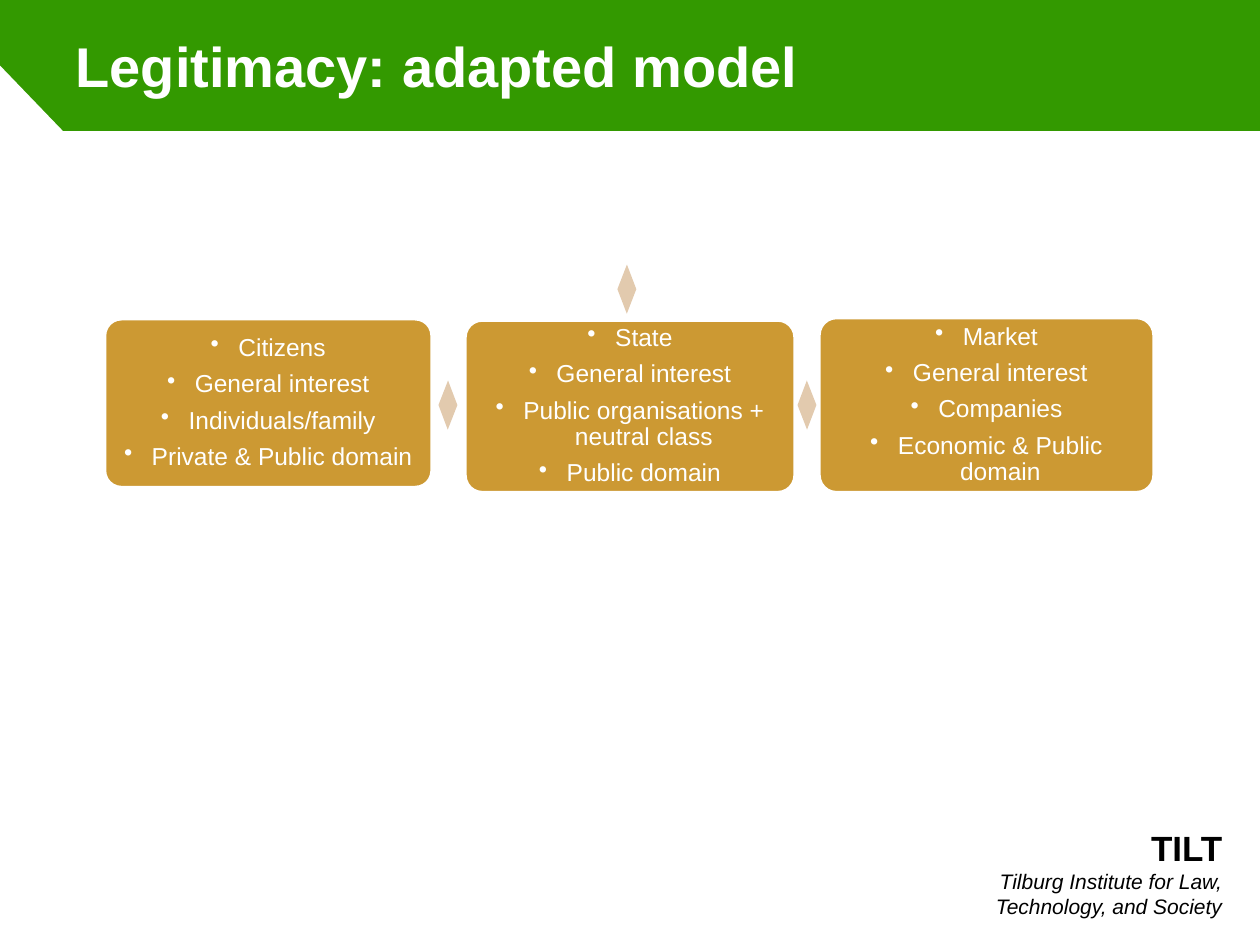
from lxml import etree
from pptx import Presentation
from pptx.dml.color import RGBColor
from pptx.enum.shapes import MSO_SHAPE
from pptx.enum.text import MSO_ANCHOR, PP_ALIGN
from pptx.oxml.ns import qn
from pptx.util import Inches, Pt

ROUNDED = MSO_SHAPE.ROUNDED_RECTANGLE
DOUBLE_ARROW = MSO_SHAPE.LEFT_RIGHT_ARROW
MIDDLE = MSO_ANCHOR.MIDDLE
LEFT, CENTER, RIGHT = PP_ALIGN.LEFT, PP_ALIGN.CENTER, PP_ALIGN.RIGHT

GREEN = RGBColor(0x33, 0x99, 0x00)
OCHRE = RGBColor(0xCC, 0x99, 0x33)
SAND = RGBColor(0xE2, 0xCA, 0xAE)
WHITE = RGBColor(0xFF, 0xFF, 0xFF)
BLACK = RGBColor(0x00, 0x00, 0x00)

TITLE = "Legitimacy: adapted model"
ACTORS = [
    ((3.69, 2.54, 2.62, 1.37),
     ["State", "General interest", "Public organisations + neutral class", "Public domain"]),
    ((6.5, 2.52, 2.66, 1.39),
     ["Market", "General interest", "Companies", "Economic & Public domain"]),
    ((0.83, 2.53, 2.6, 1.34),
     ["Citizens", "General interest", "Individuals/family", "Private & Public domain"]),
]
ARROW_SIZE = (0.15, 0.39)
ARROWS = [((6.33, 3.02), 359.8), ((4.9, 2.1), 180.1), ((3.48, 3.02), 0.4)]
SIGNATURE = [
    ("TILT", {"size": Pt(20), "bold": True}),
    ("Tilburg Institute for Law, Technology, and Society",
     {"size": Pt(12), "bold": False, "italic": True}),
]
PAGE_OUTLINE = [(0.5, 1.04), (0, 0.52), (0, 7.5), (10, 7.5), (10, 1.04)]
BULLET_INDENT = Inches(0.22)


def inches(values):
    return [Inches(value) for value in values]


def format_font(font, color, **values):
    font.name = "Arial"
    font.color.rgb = color
    for name, value in values.items():
        setattr(font, name, value)


def fill_plain(shape, color):
    shape.shadow.inherit = False
    shape.fill.solid()
    shape.fill.fore_color.rgb = color
    shape.line.fill.background()


def add_bullet(paragraph):
    properties = paragraph._p.get_or_add_pPr()
    properties.set("marL", str(BULLET_INDENT))
    properties.set("indent", str(-BULLET_INDENT))
    etree.SubElement(properties, qn("a:buChar")).set("char", "•")


def add_page(slide):
    """Draw the white page below the green header, with its cut corner."""
    points = [inches(point) for point in PAGE_OUTLINE]
    builder = slide.shapes.build_freeform(*points[0], scale=1.0)
    builder.add_line_segments(points[1:], close=True)
    fill_plain(builder.convert_to_shape(), WHITE)


def add_title(slide):
    title = slide.shapes.title
    title.left, title.top, title.width, title.height = inches((0.5, 0, 9, 1.04))
    title.text_frame.vertical_anchor = MIDDLE
    paragraph = title.text_frame.paragraphs[0]
    paragraph.text = TITLE
    paragraph.alignment = LEFT
    format_font(paragraph.font, WHITE, size=Pt(32), bold=True)


def add_signature(slide):
    box = slide.shapes.add_textbox(*inches((7.28, 6.51, 2.52, 0.84)))
    box.text_frame.word_wrap = True
    paragraph = box.text_frame.paragraphs[0]
    paragraph.alignment = RIGHT
    for index, (text, values) in enumerate(SIGNATURE):
        if index:
            paragraph.add_line_break()
        run = paragraph.add_run()
        run.text = text
        format_font(run.font, BLACK, **values)


def add_actor(slide, place, lines):
    box = slide.shapes.add_shape(ROUNDED, *inches(place))
    box.adjustments[0] = 0.1
    fill_plain(box, OCHRE)
    box.line.color.rgb = WHITE
    box.line.width = Pt(2)
    frame = box.text_frame
    frame.word_wrap = True
    frame.vertical_anchor = MIDDLE
    for side in ("left", "top", "right", "bottom"):
        setattr(frame, f"margin_{side}", Inches(0.06))
    for index, line in enumerate(lines):
        paragraph = frame.add_paragraph() if index else frame.paragraphs[0]
        paragraph.text = line
        paragraph.alignment = CENTER
        paragraph.line_spacing = 0.9
        paragraph.space_after = Pt(5.6)
        add_bullet(paragraph)
        format_font(paragraph.font, WHITE, size=Pt(14))


def add_arrow(slide, corner, rotation):
    arrow = slide.shapes.add_shape(DOUBLE_ARROW, *inches(corner + ARROW_SIZE))
    arrow.adjustments[0] = 0.6
    arrow.adjustments[1] = 0.5
    arrow.rotation = rotation
    fill_plain(arrow, SAND)


def main():
    presentation = Presentation()
    presentation.slide_width, presentation.slide_height = inches((10, 7.5))
    slide = presentation.slides.add_slide(presentation.slide_layouts[5])
    slide.background.fill.solid()
    slide.background.fill.fore_color.rgb = GREEN
    add_page(slide)
    add_title(slide)
    add_signature(slide)
    for (place, lines), (corner, rotation) in zip(ACTORS, ARROWS):
        add_actor(slide, place, lines)
        add_arrow(slide, corner, rotation)
    presentation.save("out.pptx")


if __name__ == "__main__":
    main()
